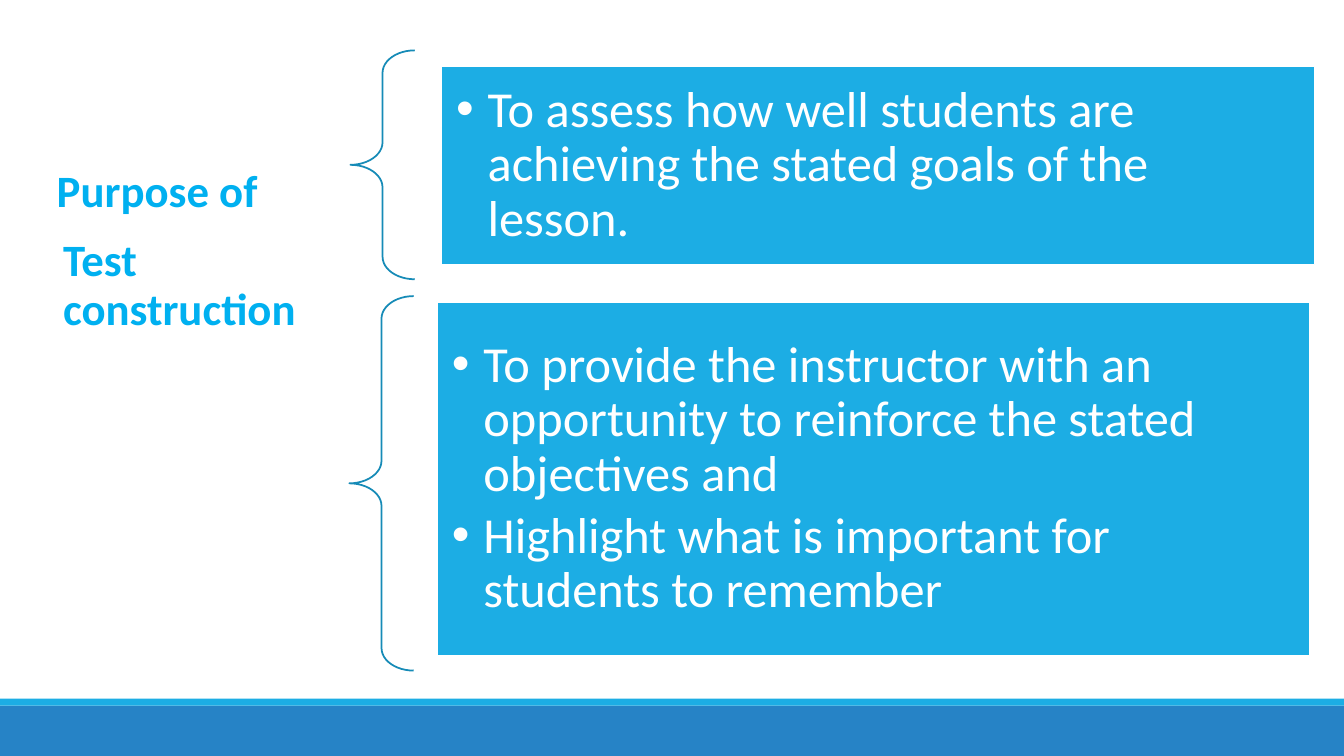
from dataclasses import dataclass

from lxml import etree
from pptx import Presentation
from pptx.dml.color import RGBColor
from pptx.enum.shapes import MSO_SHAPE
from pptx.enum.text import MSO_ANCHOR, MSO_AUTO_SIZE, PP_ALIGN
from pptx.oxml.ns import qn
from pptx.util import Pt

RECT, BRACE = MSO_SHAPE.RECTANGLE, MSO_SHAPE.LEFT_BRACE
MIDDLE, LEFT, FIXED = MSO_ANCHOR.MIDDLE, PP_ALIGN.LEFT, MSO_AUTO_SIZE.NONE

HUES = {
    "band": "2683C6",
    "panel": "1CADE4",
    "brace": "168BB7",
    "head": "00B0F0",
    "white": "FFFFFF",
}
WIDTH, HEIGHT = 960, 540
EDGE = 1.25
INDENT = 22.5

Box = tuple[float, float, float, float]


@dataclass
class Style:
    size: float
    hue: str
    bold: bool
    after: float
    pad: tuple[float, float]
    bullet: bool = False


@dataclass
class Group:
    brace: Box
    panel: Box
    lines: list[str]


@dataclass
class Band:
    top: float
    depth: float
    hue: str


HEAD = Style(32, "head", True, 11.2, (18, 6.5))
LIST = Style(36, "white", False, 5.4, (10.8, 10.8), True)

BANDS = [Band(504, 36, "band"), Band(499, 5, "panel")]
HEADS = [
    ((22.5, 105, 229.5, 65.5), "Purpose of"),
    ((27, 164, 229, 81), "Test construction"),
]
GROUPS = [
    Group((250.25, 36, 46, 163.5), (315, 47.5, 624, 141.5),
          ["To assess how well students are achieving the stated goals of the lesson."]),
    Group((249.5, 211.5, 46, 267.5), (312, 215.5, 623.5, 253),
          ["To provide the instructor with an opportunity to reinforce the stated objectives and",
           "Highlight what is important for students to remember"]),
]


def tint(name: str) -> RGBColor:
    return RGBColor.from_string(HUES[name])


def apply(target, values: dict) -> None:
    for key, value in values.items():
        setattr(target, key, value)


def place(shape, box: Box) -> None:
    apply(shape, dict(zip(("left", "top", "width", "height"), map(Pt, box))))


def paint(shape, hue: str) -> None:
    shape.fill.solid()
    shape.fill.fore_color.rgb = tint(hue)


def outline(shape, hue: str) -> None:
    shape.line.color.rgb = tint(hue)
    shape.line.width = Pt(EDGE)


def mark(para) -> None:
    props = para._p.get_or_add_pPr()
    props.set("marL", str(Pt(INDENT)))
    props.set("indent", str(-Pt(INDENT)))
    etree.SubElement(props, qn("a:buChar")).set("char", "•")


def write(shape, lines: list[str], style: Style) -> None:
    frame = shape.text_frame
    side, end = map(Pt, style.pad)
    apply(frame, {
        "word_wrap": True, "auto_size": FIXED, "vertical_anchor": MIDDLE,
        "margin_left": side, "margin_right": side,
        "margin_top": end, "margin_bottom": end,
    })
    frame.text = "\n".join(lines)
    for para in frame.paragraphs:
        apply(para, {
            "alignment": LEFT, "line_spacing": 0.9,
            "space_before": Pt(0), "space_after": Pt(style.after),
        })
        if style.bullet:
            mark(para)
        font = para.runs[0].font
        apply(font, {"name": "Calibri", "size": Pt(style.size), "bold": style.bold})
        font.color.rgb = tint(style.hue)


def draw_band(slide, band: Band) -> None:
    shape = slide.shapes.add_shape(RECT, 0, Pt(band.top), Pt(WIDTH), Pt(band.depth))
    shape.shadow.inherit = False
    paint(shape, band.hue)
    shape.line.fill.background()


def draw_group(slide, group: Group, panel) -> None:
    brace = slide.shapes.add_shape(BRACE, *map(Pt, group.brace))
    brace.shadow.inherit = False
    brace.adjustments[0] = 0.35
    brace.fill.background()
    outline(brace, "brace")
    place(panel, group.panel)
    paint(panel, "panel")
    outline(panel, "white")
    write(panel, group.lines, LIST)


def main() -> None:
    deck = Presentation()
    deck.slide_width, deck.slide_height = Pt(WIDTH), Pt(HEIGHT)
    slide = deck.slides.add_slide(deck.slide_layouts[3])
    title, *panels = slide.placeholders

    # Footer bands
    for band in BANDS:
        draw_band(slide, band)

    # Heading in two parts
    label = slide.shapes.add_textbox(0, 0, 0, 0)
    for shape, (box, text) in zip((title, label), HEADS):
        place(shape, box)
        write(shape, [text], HEAD)

    # Braces with their lists
    for group, panel in zip(GROUPS, panels):
        draw_group(slide, group, panel)

    deck.save("out.pptx")


if __name__ == "__main__":
    main()
